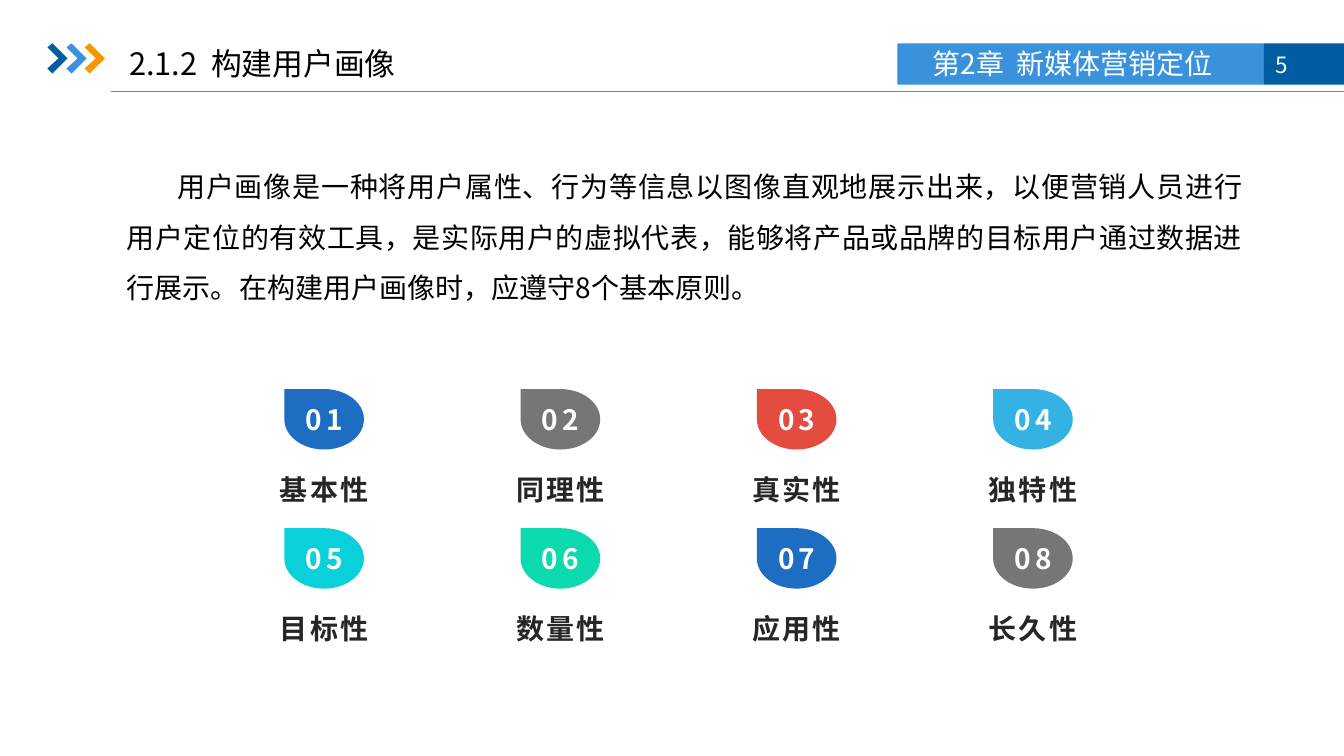
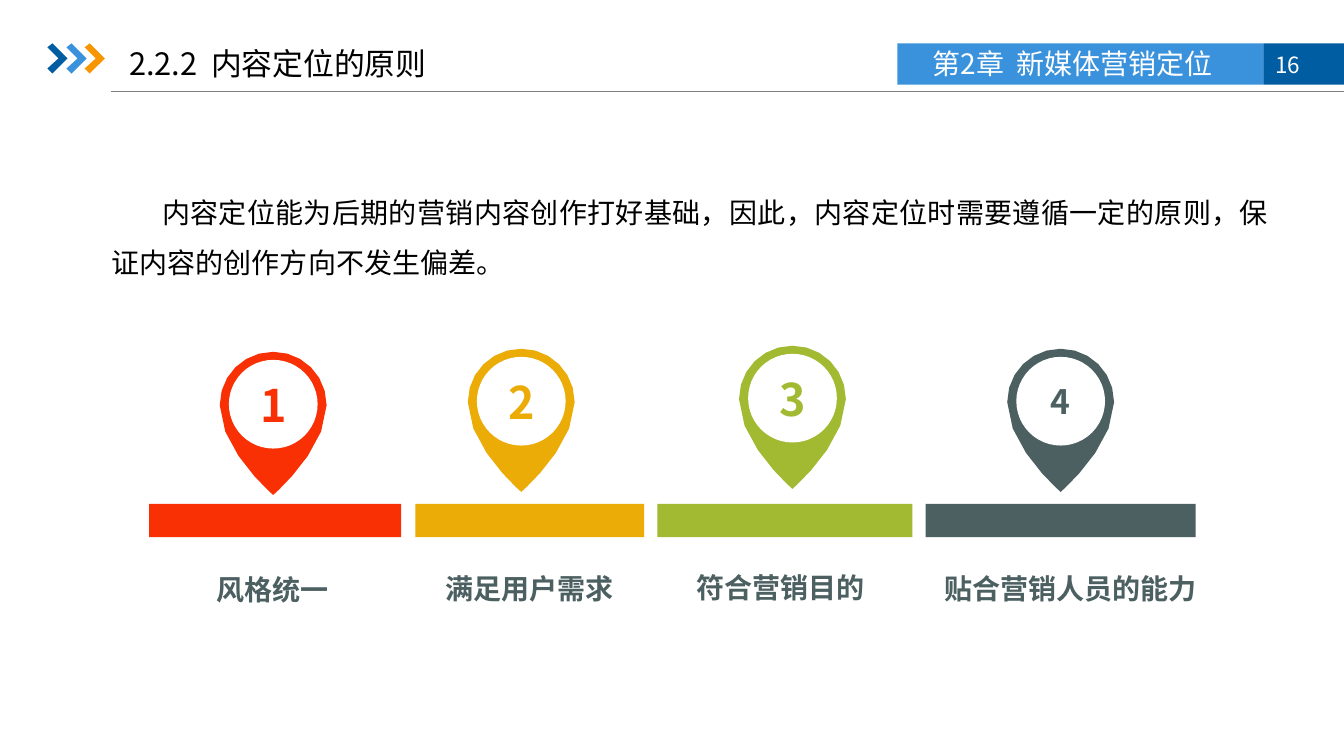
from lxml import etree
from pptx import Presentation
from pptx.dml.color import RGBColor
from pptx.enum.shapes import MSO_CONNECTOR, MSO_SHAPE
from pptx.enum.text import MSO_ANCHOR, MSO_AUTO_SIZE, PP_ALIGN
from pptx.oxml.ns import qn
from pptx.util import Inches, Pt

RECT, OVAL, TEARDROP = MSO_SHAPE.RECTANGLE, MSO_SHAPE.OVAL, MSO_SHAPE.TEAR
STRAIGHT = MSO_CONNECTOR.STRAIGHT
LEFT, CENTER, JUSTIFY = PP_ALIGN.LEFT, PP_ALIGN.CENTER, PP_ALIGN.JUSTIFY
TOP, MIDDLE = MSO_ANCHOR.TOP, MSO_ANCHOR.MIDDLE
NO_AUTOFIT = MSO_AUTO_SIZE.NONE

FONT = "Noto Sans CJK SC"
BLACK = RGBColor(0x00, 0x00, 0x00)
WHITE = RGBColor(0xFF, 0xFF, 0xFF)
INK = RGBColor(0x26, 0x26, 0x26)
RULE = RGBColor(0x80, 0x80, 0x80)
NAVY = RGBColor(0x00, 0x5D, 0xA2)
SKY = RGBColor(0x39, 0x92, 0xDB)
ORANGE = RGBColor(0xF7, 0x96, 0x00)
BLUE = RGBColor(0x1D, 0x6D, 0xC2)
GRAY = RGBColor(0x76, 0x76, 0x76)
CORAL = RGBColor(0xE3, 0x4C, 0x3F)
AZURE = RGBColor(0x34, 0xB2, 0xE4)
CYAN = RGBColor(0x0A, 0xD0, 0xDA)
MINT = RGBColor(0x0A, 0xDA, 0xAD)
RED = RGBColor(0xF8, 0x30, 0x03)
AMBER = RGBColor(0xEB, 0xAC, 0x07)
OLIVE = RGBColor(0xA2, 0xB9, 0x32)
SLATE = RGBColor(0x4C, 0x60, 0x62)

CHAPTER = "第2章  新媒体营销定位"

PERSONA = {
    "title": "2.1.2  构建用户画像",
    "page": "5",
    "body": "用户画像是一种将用户属性、行为等信息以图像直观地展示出来，以便营销人员进行"
            "用户定位的有效工具，是实际用户的虚拟代表，能够将产品或品牌的目标用户通过"
            "数据进行展示。在构建用户画像时，应遵守8个基本原则。",
    "body_box": (1.16, 1.47, 11.26, 1.61),
}
TRAITS = [
    ("基本性", BLUE), ("同理性", GRAY), ("真实性", CORAL), ("独特性", AZURE),
    ("目标性", CYAN), ("数量性", MINT), ("应用性", BLUE), ("长久性", GRAY),
]

CONTENT = {
    "title": "2.2.2  内容定位的原则",
    "page": "16",
    "body": "内容定位能为后期的营销内容创作打好基础，因此，内容定位时需要遵循一定的原则，"
            "保证内容的创作方向不发生偏差。",
    "body_box": (1.01, 1.72, 11.67, 1.11),
}
PRINCIPLES = [
    {"label": "风格统一", "color": RED, "bar": (1.48, 2.5),
     "pin": (2.71, 3.49), "size": 32, "label_at": (2.7, 5.46)},
    {"label": "满足用户需求", "color": AMBER, "bar": (4.12, 2.27),
     "pin": (5.17, 3.46), "size": 32, "label_at": (5.25, 5.45)},
    {"label": "符合营销目的", "color": OLIVE, "bar": (6.52, 2.53),
     "pin": (7.86, 3.43), "size": 32, "label_at": (7.74, 5.44)},
    {"label": "贴合营销人员的能力", "color": SLATE, "bar": (9.18, 2.68),
     "pin": (10.52, 3.46), "size": 24, "label_at": (10.62, 5.45)},
]

CHEVRON = [(0, 0.04), (0.05, 0), (0.2, 0.15), (0.05, 0.3), (0, 0.25), (0.11, 0.15)]
CHEVRONS = [(0.47, NAVY), (0.66, SKY), (0.84, ORANGE)]


def box(x, y, w, h):
    return Inches(x), Inches(y), Inches(w), Inches(h)


def paint(sp, color):
    sp.shadow.inherit = False
    sp.fill.solid()
    sp.fill.fore_color.rgb = color
    sp.line.fill.background()
    return sp


def add_block(s, kind, bounds, color):
    return paint(s.shapes.add_shape(kind, *box(*bounds)), color)


def add_outline(s, left, top, outline, color):
    points = [(Inches(left + x), Inches(top + y)) for x, y in outline]
    builder = s.shapes.build_freeform(*points[0], scale=1.0)
    builder.add_line_segments(points[1:], close=True)
    return paint(builder.convert_to_shape(), color)


def setup_text(sp, align, anchor=MIDDLE, insets=(0, 0, 0, 0), leading=None, wrap=True):
    tf = sp.text_frame
    tf.auto_size = NO_AUTOFIT
    tf.word_wrap = wrap
    tf.vertical_anchor = anchor
    tf.margin_left, tf.margin_top, tf.margin_right, tf.margin_bottom = map(Inches, insets)
    p = tf.paragraphs[0]
    p.alignment = align
    if leading:
        p.line_spacing = leading
    return p


def add_run(p, text, size, color, bold=False, spacing=0):
    r = p.add_run()
    r.text = text
    r.font.size = Pt(size)
    r.font.bold = bold
    r.font.color.rgb = color
    r.font.name = FONT
    rPr = r.font._element
    etree.SubElement(rPr, qn("a:ea")).set("typeface", FONT)
    if spacing:
        rPr.set("spc", str(int(spacing * 100)))


def add_label(s, bounds, text, color, leading, spacing=0, insets=(0.1, 0.05, 0.1, 0.05)):
    sp = s.shapes.add_textbox(*box(*bounds))
    add_run(setup_text(sp, CENTER, TOP, insets, leading), text, 20, color, True, spacing)


def add_frame(prs, content):
    s = prs.slides.add_slide(prs.slide_layouts[5])
    title = s.shapes.title
    title.left, title.top, title.width, title.height = box(1.15, 0.41, 4.35, 0.43)
    p = setup_text(title, LEFT, insets=(0.13, 0.07, 0.13, 0.07))
    add_run(p, content["title"], 22, BLACK)

    chapter = add_block(s, RECT, (8.9, 0.43, 3.63, 0.41), SKY)
    add_run(setup_text(chapter, CENTER, insets=(0, 0, 0.15, 0.02)), CHAPTER, 20, WHITE)
    page = add_block(s, RECT, (12.53, 0.43, 0.8, 0.41), NAVY)
    add_run(setup_text(page, LEFT, insets=(0.12, 0.02, 0, 0)), content["page"], 16, WHITE)

    rule = s.shapes.add_connector(STRAIGHT, Inches(1.1), Inches(0.91),
                                  prs.slide_width, Inches(0.91))
    rule.line.color.rgb = RULE
    rule.line.width = Pt(0.75)
    etree.SubElement(rule._element.spPr, qn("a:effectLst"))

    for left, color in CHEVRONS:
        add_outline(s, left, 0.43, CHEVRON, color)

    body = s.shapes.add_textbox(*box(*content["body_box"]))
    p = setup_text(body, JUSTIFY, TOP, (0.1, 0.05, 0.1, 0.05), 1.5)
    p._p.get_or_add_pPr().set("indent", str(Inches(0.5)))
    add_run(p, content["body"], 20, BLACK)
    return s


def bezier(p0, p1, p2, p3, steps):
    for i in range(steps):
        t = i / steps
        u = 1 - t
        yield tuple(u**3 * a + 3 * u * u * t * b + 3 * u * t * t * c + t**3 * d
                    for a, b, c, d in zip(p0, p1, p2, p3))


def pin_outline():
    crown, shoulder, tip = (0, 0), (0.53, 0.53), (0, 1.42)
    right = [*bezier(crown, (0.29, 0), (0.53, 0.23), shoulder, 6),
             *bezier(shoulder, (0.53, 0.97), tip, tip, 5)]
    return right + [tip] + [(-x, y) for x, y in reversed(right[1:])]


def add_traits(s):
    for i, (label, color) in enumerate(TRAITS):
        row, col = divmod(i, 4)
        left, top = 2.82 + 7.03 / 3 * col, 3.86 + 1.38 * row
        drop = add_block(s, TEARDROP, (left, top, 0.79, 0.6), color)
        drop._element.spPr.xfrm.set("flipH", "1")
        add_run(setup_text(drop, CENTER, wrap=False), f"{i + 1:02d}", 20, WHITE, True, 3)
        add_label(s, (left - 0.57, top + 0.69, 1.93, 0.47), label, INK, 1.3, 1.5,
                  (0.07, 0.04, 0.07, 0.04))


def add_principles(s):
    outline, radius = pin_outline(), 0.44
    for number, item in enumerate(PRINCIPLES, 1):
        color = item["color"]
        pin_x, pin_top = item["pin"]
        add_outline(s, pin_x, pin_top, outline, color)
        disc = add_block(s, OVAL, (pin_x - radius, pin_top + 0.08, 2 * radius, 2 * radius), WHITE)
        add_run(setup_text(disc, CENTER, wrap=False), str(number), item["size"], color, True)

        bar_left, bar_width = item["bar"]
        add_block(s, RECT, (bar_left, 5, bar_width, 0.33), color)

        label_x, label_top = item["label_at"]
        width = 0.28 * len(item["label"]) + 0.3
        add_label(s, (label_x - width / 2, label_top, width, 0.6), item["label"], SLATE, 1.5)


def main():
    prs = Presentation()
    prs.slide_width, prs.slide_height = Inches(13.33), Inches(7.5)
    add_traits(add_frame(prs, PERSONA))
    add_principles(add_frame(prs, CONTENT))
    prs.save("out.pptx")


if __name__ == "__main__":
    main()
